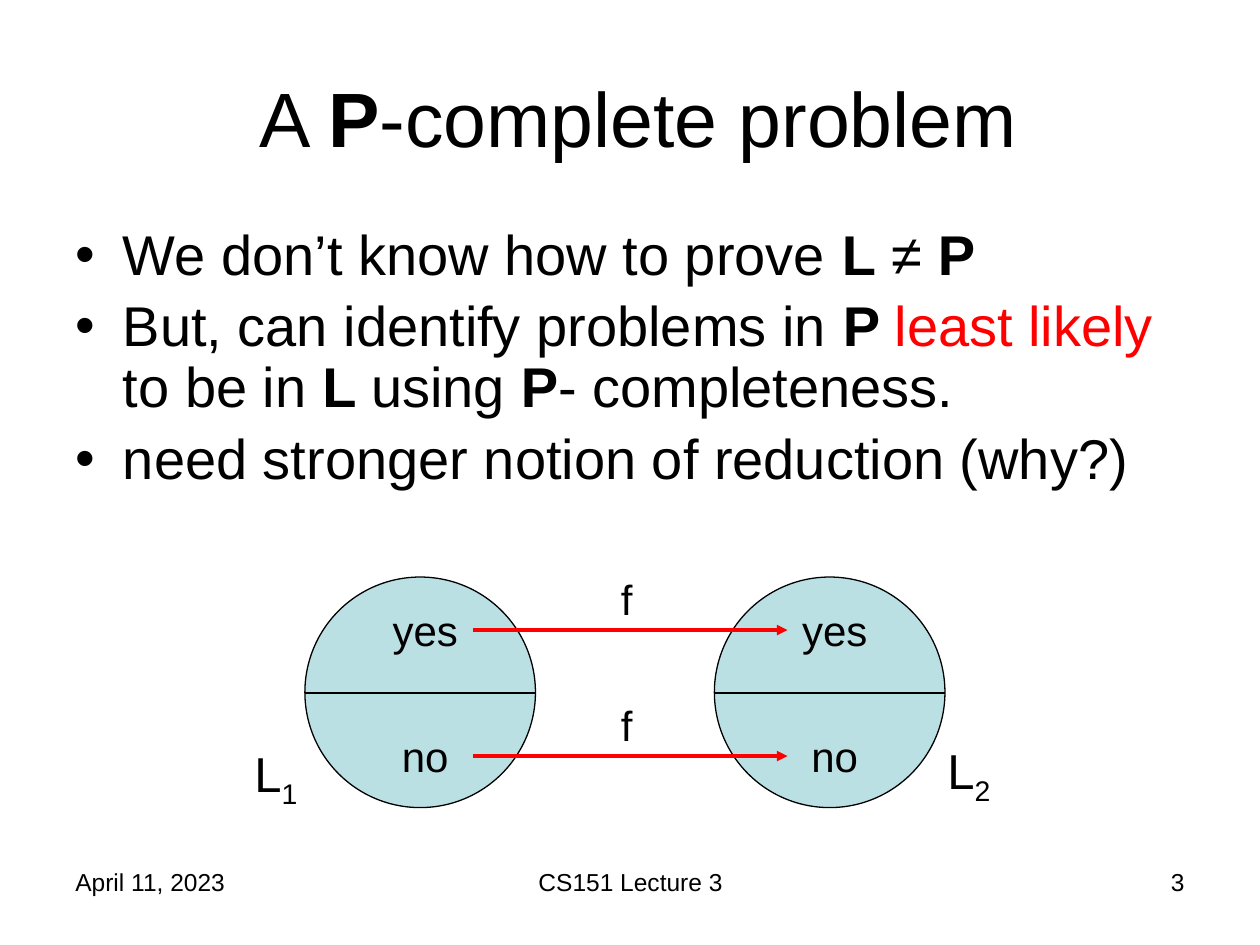
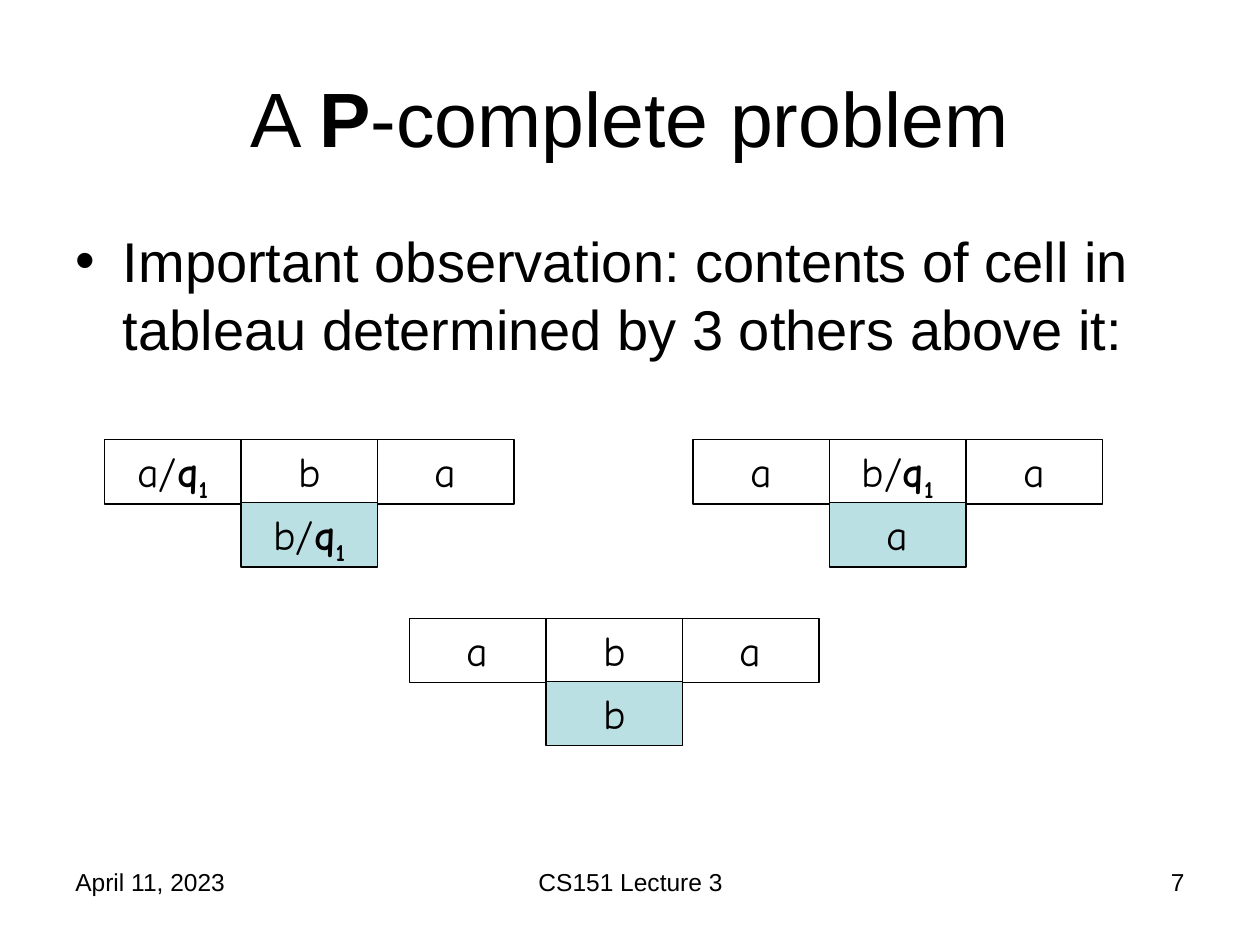
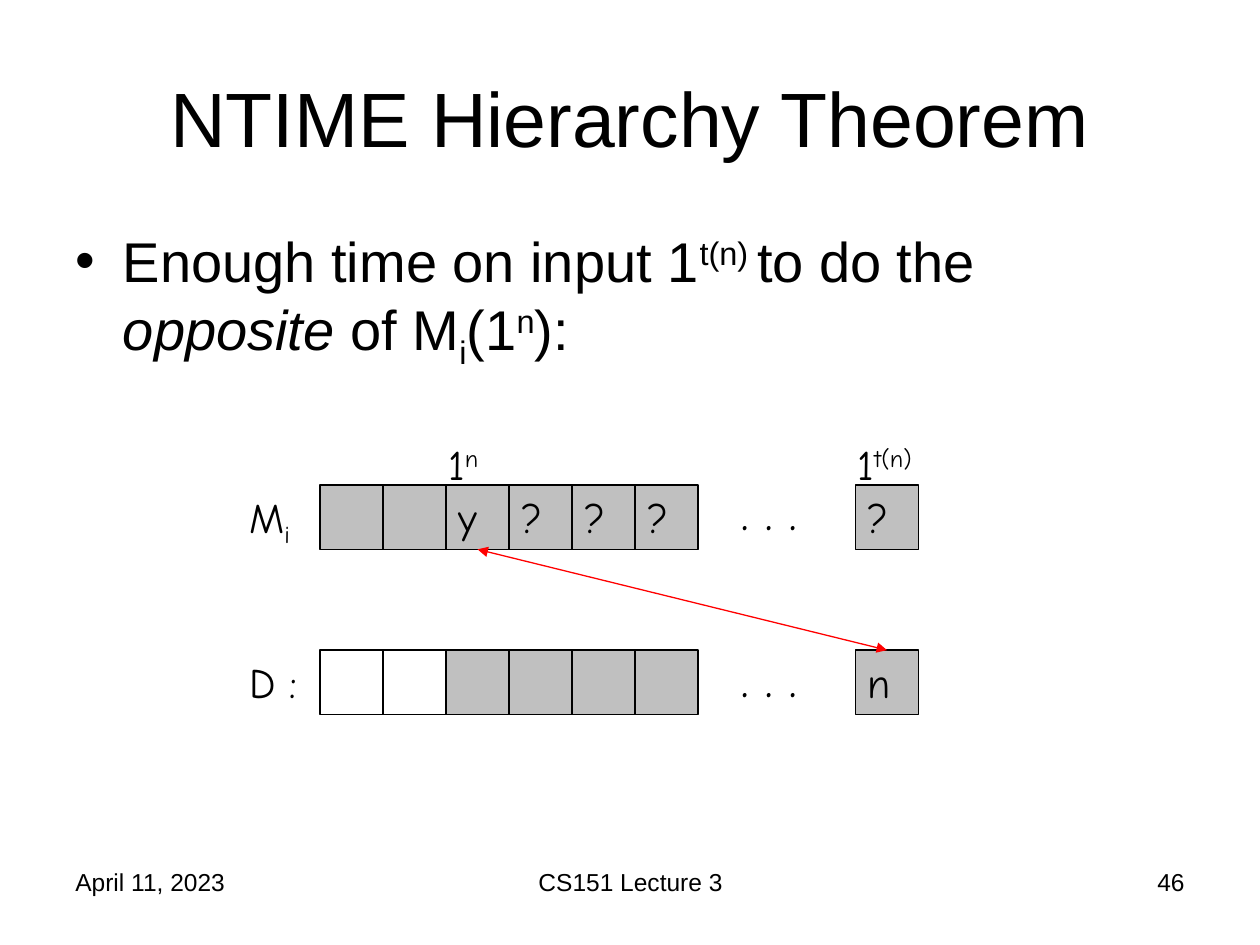
"""Build three lecture slides on P-completeness and the NTIME hierarchy."""
from lxml import etree
from pptx import Presentation
from pptx.dml.color import RGBColor
from pptx.enum.shapes import MSO_CONNECTOR, MSO_SHAPE
from pptx.enum.text import MSO_ANCHOR, MSO_AUTO_SIZE, PP_ALIGN
from pptx.oxml.ns import qn
from pptx.util import Inches, Pt

STRAIGHT = MSO_CONNECTOR.STRAIGHT
ELLIPSE, RECTANGLE = MSO_SHAPE.OVAL, MSO_SHAPE.RECTANGLE
LEFT, CENTER, RIGHT = PP_ALIGN.LEFT, PP_ALIGN.CENTER, PP_ALIGN.RIGHT
TOP, MIDDLE = MSO_ANCHOR.TOP, MSO_ANCHOR.MIDDLE
NO_AUTOFIT = MSO_AUTO_SIZE.NONE

BLACK = RGBColor(0x00, 0x00, 0x00)
RED = RGBColor(0xFF, 0x00, 0x00)
TEAL = RGBColor(0xBB, 0xE0, 0xE3)
GRAY = RGBColor(0xC0, 0xC0, 0xC0)
SANS, COMIC = "Arial", "Comic Neue"
BASELINES = {"sub": "-25000", "super": "30000"}
THIN = 0.75


def write(paragraph, runs, size, font=SANS, alignment=LEFT):
    paragraph.alignment = alignment
    paragraph.font.size = Pt(size)
    paragraph.font.name = font
    paragraph.font.color.rgb = BLACK
    for text, *styles in runs:
        run = paragraph.add_run()
        run.text = text
        if "bold" in styles:
            run.font.bold = True
        if "italic" in styles:
            run.font.italic = True
        if "red" in styles:
            run.font.color.rgb = RED
        for style in BASELINES.keys() & set(styles):
            run.font._element.set("baseline", BASELINES[style])


def add_box(slide, place, runs=(), size=24, font=SANS, alignment=LEFT, preset=None, fill=None):
    bounds = [Inches(length) for length in place]
    if preset is None:
        shape = slide.shapes.add_textbox(*bounds)
    else:
        shape = slide.shapes.add_shape(preset, *bounds)
        shape.shadow.inherit = False
        shape.line.color.rgb = BLACK
        shape.line.width = Pt(THIN)
        if fill is None:
            shape.fill.background()
        else:
            shape.fill.solid()
            shape.fill.fore_color.rgb = fill
    shape.text_frame.word_wrap = True
    shape.text_frame.vertical_anchor = TOP
    if runs:
        write(shape.text_frame.paragraphs[0], runs, size, font, alignment)
    return shape


presentation = Presentation()
presentation.slide_width, presentation.slide_height = Inches(10), Inches(7.5)

P_COMPLETE = [("P", "bold"), ("-complete problem",)]
PAGES = [
    (3, [(" A ",), *P_COMPLETE], 2.42, 0.9, [
        [("We don’t know how to prove ",), ("L", "bold"), (" ≠ ",), ("P", "bold")],
        [("But, can identify problems in ",), ("P ", "bold"), ("least likely", "red"),
         (" to be in ",), ("L ", "bold"), ("using ",), ("P", "bold"), ("- completeness.",)],
        [("need stronger notion of reduction (why?)",)],
    ]),
    (7, [("A ",), *P_COMPLETE], 1.25, 1.0, [
        [("Important observation: contents of cell in tableau determined by 3 others above it:",)],
    ]),
    (46, [("NTIME Hierarchy Theorem",)], 4.95, 1.0, [
        [("Enough time on input 1",), ("t(n) ", "super"), ("to do the ",), ("opposite", "italic"),
         (" of M",), ("i", "sub"), ("(1",), ("n", "super"), ("):",)],
    ]),
]

slides = []
for number, title_runs, body_height, line_spacing, bullets in PAGES:
    slide = presentation.slides.add_slide(presentation.slide_layouts[1])
    slides.append(slide)
    title, body = slide.placeholders
    for placeholder, top, height in ((title, 0.3, 1.25), (body, 1.75, body_height)):
        placeholder.left, placeholder.top = Inches(0.5), Inches(top)
        placeholder.width, placeholder.height = Inches(9), Inches(height)
        placeholder.text_frame.auto_size = NO_AUTOFIT
    title.text_frame.vertical_anchor = MIDDLE
    write(title.text_frame.paragraphs[0], title_runs, 44, alignment=CENTER)
    for index, runs in enumerate(bullets):
        frame = body.text_frame
        paragraph = frame.add_paragraph() if index else frame.paragraphs[0]
        write(paragraph, runs, 32)
        paragraph.line_spacing = line_spacing
    for left, width, text, alignment in (
        (0.5, 2.33, "April 11, 2023", LEFT),
        (3.42, 3.17, "CS151 Lecture 3", CENTER),
        (7.17, 2.33, str(number), RIGHT),
    ):
        add_box(slide, (left, 6.83, width, 0.52), [(text,)], 14, alignment=alignment)

reduction_slide, tableau_slide, hierarchy_slide = slides
lines = []

DIAMETER, CIRCLE_TOP = 1.83, 4.58
ANSWERS = (("yes", 4.75), ("no", 5.75))
answer_boxes = {}
for side, circle_left, answer_left in (("from", 2.42, 3), ("to", 5.67, 6.25)):
    add_box(reduction_slide, (circle_left, CIRCLE_TOP, DIAMETER, DIAMETER),
            preset=ELLIPSE, fill=TEAL)
    divider = reduction_slide.shapes.add_connector(
        STRAIGHT, Inches(circle_left), Inches(5.5), Inches(circle_left + DIAMETER), Inches(5.5))
    lines.append((divider, BLACK, THIN, ()))
    for answer, top in ANSWERS:
        answer_boxes[side, answer] = add_box(
            reduction_slide, (answer_left, top, 0.75, 0.5), [(answer,)], alignment=CENTER)
for answer, top in ANSWERS:
    mapping = reduction_slide.shapes.add_connector(STRAIGHT, 0, 0, 0, 0)
    mapping.begin_connect(answer_boxes["from", answer], 3)
    mapping.end_connect(answer_boxes["to", answer], 1)
    lines.append((mapping, RED, 2, ("tailEnd",)))
    add_box(reduction_slide, (4.83, top - 0.25, 0.58, 0.5), [("f",)])
for left, top, index in ((1.92, 5.85, "1"), (7.42, 5.83, "2")):
    add_box(reduction_slide, (left, top, 0.58, 0.57), [("L",), (index, "sub")], 28)

CELL_WIDTH, CELL_HEIGHT, ROW_STEP = 13 / 12, 0.51, 0.5
STATE = [("q", "bold"), ("1", "bold", "sub")]
A, B = [("a",)], [("b",)]
A_STATE, B_STATE = [("a/",), *STATE], [("b/",), *STATE]
for left, top, above, below in (
    (0.83, 3.49, (A_STATE, B, A), B_STATE),
    (5.5, 3.49, (A, B_STATE, A), A),
    (3.25, 4.91, (A, B, A), B),
):
    cells = [(column, 0, runs, None) for column, runs in enumerate(above)]
    for column, row, runs, fill in [*cells, (1, 1, below, TEAL)]:
        place = (left + column * CELL_WIDTH, top + row * ROW_STEP, CELL_WIDTH, CELL_HEIGHT)
        add_box(tableau_slide, place, runs, 24, COMIC, CENTER, RECTANGLE, fill)

TAPE_LEFT, TAPE_STEP = 2.54, 0.5
TAPE_COLUMNS = (0, 1, 2, 3, 4, 5, 8.5)
tape_cells = []
for top, dots_top, symbols, blank_count, name in (
    (3.85, 3.77, ("", "", "y", "?", "?", "?", "?"), 0, [("M",), ("i", "sub")]),
    (5.16, 5.1, ("", "", "", "", "", "", "n"), 2, [("D :",)]),
):
    add_box(hierarchy_slide, (1.88, top, 0.83, 0.5), name, font=COMIC)
    add_box(hierarchy_slide, (5.79, dots_top, 0.83, 0.57), [(". . .",)], 28, COMIC)
    tape_cells.append([
        add_box(hierarchy_slide, (TAPE_LEFT + column * TAPE_STEP, top, TAPE_STEP, CELL_HEIGHT),
                [(symbol,)] if symbol else (), font=COMIC, preset=RECTANGLE,
                fill=GRAY if index >= blank_count else None)
        for index, (column, symbol) in enumerate(zip(TAPE_COLUMNS, symbols))
    ])
for left, width, exponent in ((3.46, 0.5, "n"), (6.71, 0.75, "t(n)")):
    add_box(hierarchy_slide, (left, 3.43, width, 0.5), [("1",), (exponent, "super")], font=COMIC)
opposite = hierarchy_slide.shapes.add_connector(STRAIGHT, 0, 0, 0, 0)
opposite.begin_connect(tape_cells[0][2], 2)
opposite.end_connect(tape_cells[1][-1], 0)
lines.append((opposite, RED, THIN, ("headEnd", "tailEnd")))

for connector, color, width, arrowheads in lines:
    connector.line.color.rgb = color
    connector.line.width = Pt(width)
    properties = connector._element.spPr
    for arrowhead in arrowheads:
        etree.SubElement(properties.find(qn("a:ln")), qn(f"a:{arrowhead}"), type="triangle")
    etree.SubElement(properties, qn("a:effectLst"))

presentation.save("out.pptx")
